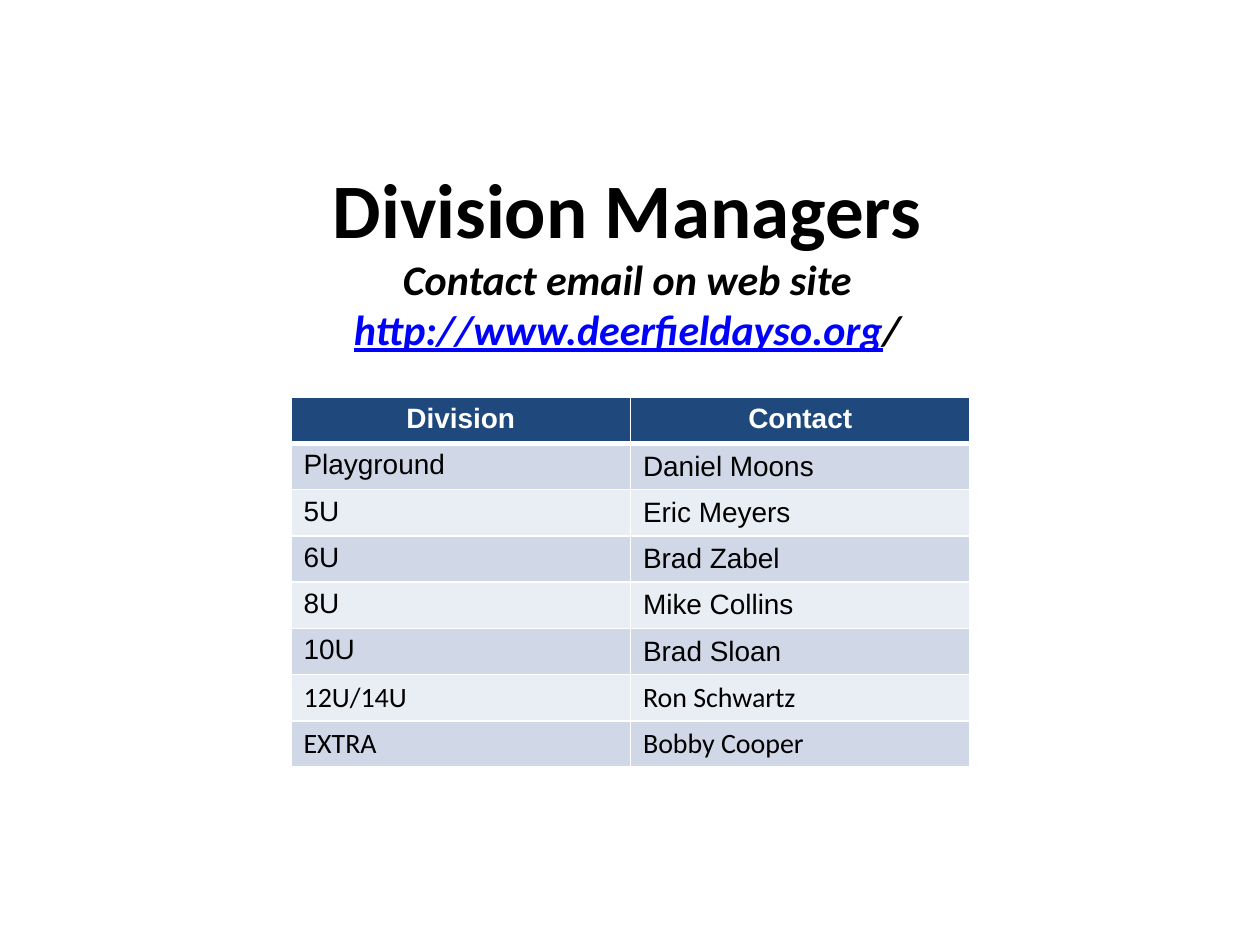
from lxml import etree
from pptx import Presentation
from pptx import util as u
from pptx.dml import color
from pptx.enum import text
from pptx.oxml import ns

COLOURS = {
    "black": "000000",
    "white": "FFFFFF",
    "link": "0000FF",
    "header": "1F497D",
    "odd": "D0D8E8",
    "even": "E9EDF4",
}

MANAGERS = [
    ("Playground", "Daniel Moons"),
    ("5U", "Eric Meyers"),
    ("6U", "Brad Zabel"),
    ("8U", "Mike Collins"),
    ("10U", "Brad Sloan"),
    ("12U/14U", "Ron Schwartz"),
    ("EXTRA", "Bobby Cooper"),
]
CALIBRI_ROWS = ("12U/14U", "EXTRA")


def rgb(name):
    return color.RGBColor.from_string(COLOURS[name])


def add_text(para, words, size=16, font="Arial", colour="black",
             bold=False, italic=False, underline=False):
    span = para.add_run()
    span.text = words
    span.font.size = u.Pt(size)
    span.font.name = font
    span.font.color.rgb = rgb(colour)
    span.font.bold = bold
    span.font.italic = italic
    span.font.underline = underline


def add_title(page):
    box = page.shapes.add_textbox(u.Pt(36), u.Pt(102.24), u.Pt(648), u.Pt(90))
    frame = box.text_frame
    frame.word_wrap = True
    frame.vertical_anchor = text.MSO_ANCHOR.MIDDLE
    frame.margin_right = u.Pt(10)
    para = frame.paragraphs[0]
    para.alignment = text.PP_ALIGN.CENTER
    subtitle = dict(size=24, font="Calibri", bold=True, italic=True)
    add_text(para, "Division Managers", size=44, font="Calibri", bold=True)
    para.add_line_break()
    add_text(para, "Contact email on web site", **subtitle)
    para.add_line_break()
    add_text(para, "http://www.deerfieldayso.org", colour="link",
             underline=True, **subtitle)
    add_text(para, "/", **subtitle)


def set_borders(cell, top=1, bottom=1):
    properties = cell._tc.get_or_add_tcPr()
    for side, width in (("L", 1), ("R", 1), ("T", top), ("B", bottom)):
        line = etree.SubElement(properties, ns.qn(f"a:ln{side}"), w=str(u.Pt(width)))
        fill = etree.SubElement(line, ns.qn("a:solidFill"))
        etree.SubElement(fill, ns.qn("a:srgbClr"), val=COLOURS["white"])


def fill_cell(cell, words, fill, align=None, anchor=None, top=1, bottom=1, **style):
    set_borders(cell, top, bottom)
    cell.fill.solid()
    cell.fill.fore_color.rgb = rgb(fill)
    if anchor is not None:
        cell.vertical_anchor = anchor
    para = cell.text_frame.paragraphs[0]
    para.alignment = align
    add_text(para, words, **style)


def add_managers(page):
    frame = page.shapes.add_table(len(MANAGERS) + 1, 2, u.Pt(166.3), u.Pt(227),
                                  u.Pt(388), u.Pt(195.84))
    table = frame.table
    for column in table.columns:
        column.width = u.Pt(194)
    for row in table.rows:
        row.height = u.Pt(24.48)
    for index, heading in enumerate(("Division", "Contact")):
        fill_cell(table.cell(0, index), heading, "header", bottom=3,
                  align=text.PP_ALIGN.CENTER, colour="white", bold=True)
    for number, (division, contact) in enumerate(MANAGERS, start=1):
        style = dict(
            fill="odd" if number % 2 else "even",
            font="Calibri" if division in CALIBRI_ROWS else "Arial",
            top=3 if number == 1 else 1,
        )
        fill_cell(table.cell(number, 0), division, **style)
        fill_cell(table.cell(number, 1), contact,
                  anchor=text.MSO_ANCHOR.MIDDLE, **style)


def main():
    deck = Presentation()
    deck.slide_width, deck.slide_height = u.Pt(720), u.Pt(540)
    page = deck.slides.add_slide(deck.slide_layouts[6])
    add_title(page)
    add_managers(page)
    deck.save("out.pptx")


if __name__ == "__main__":
    main()
